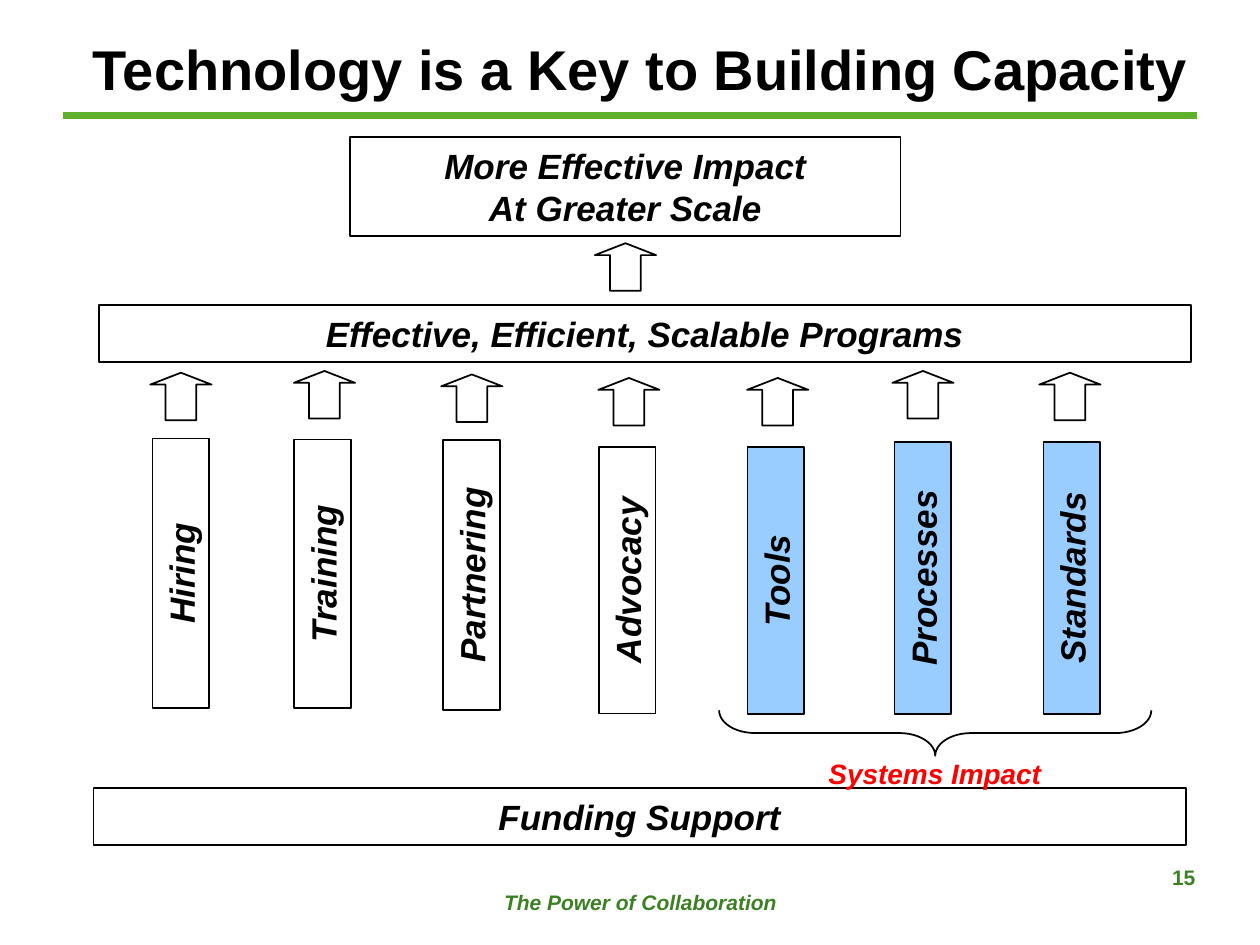
import pptx
import pptx.dml.color
import pptx.enum.shapes
import pptx.enum.text
import pptx.util
import pptx.oxml.ns
import lxml.etree

Pt = pptx.util.Pt
SHAPES = pptx.enum.shapes.MSO_SHAPE
ALIGN = pptx.enum.text.PP_ALIGN
ANCHOR = pptx.enum.text.MSO_ANCHOR
BLACK, GREEN, RED, BLUE = "000000", "3B8123", "FF0000", "99CCFF"


def color(hex_value):
    return pptx.dml.color.RGBColor.from_string(hex_value)


def add_outline(kind, left, top, width, height, fill=None, rotation=0):
    """Add a black-outlined preset shape, unfilled unless a fill is given."""
    shape = slide.shapes.add_shape(kind, Pt(left), Pt(top), Pt(width), Pt(height))
    shape.shadow.inherit = False
    shape.rotation = rotation
    shape.line.color.rgb = color(BLACK)
    shape.line.width = Pt(1)
    if fill:
        shape.fill.solid()
        shape.fill.fore_color.rgb = color(fill)
    else:
        shape.fill.background()
    return shape


def write(shape, lines, size=20, text_color=BLACK, italic=True,
          alignment=ALIGN.CENTER, anchor=ANCHOR.MIDDLE):
    frame = shape.text_frame
    frame.word_wrap = True
    frame.vertical_anchor = anchor
    for index, line in enumerate(lines):
        paragraph = frame.add_paragraph() if index else frame.paragraphs[0]
        paragraph.alignment = alignment
        run = paragraph.add_run()
        run.text = line
        run.font.name = "Arial"
        run.font.size = Pt(size)
        run.font.bold = True
        run.font.italic = italic
        run.font.color.rgb = color(text_color)


presentation = pptx.Presentation()
presentation.slide_width = Pt(720)
presentation.slide_height = Pt(540)
slide = presentation.slides.add_slide(presentation.slide_layouts[6])

# Title and rule
title = slide.shapes.add_textbox(Pt(30.2), Pt(18), Pt(671.8), Pt(41.8))
write(title, ["Technology is a Key to Building Capacity"], size=32, italic=False)
rule = slide.shapes.add_connector(
    pptx.enum.shapes.MSO_CONNECTOR.STRAIGHT, Pt(36), Pt(66), Pt(684), Pt(66))
rule.line.color.rgb = color("5FB12B")
rule.line.width = Pt(4.5)
lxml.etree.SubElement(rule._element.spPr, pptx.oxml.ns.qn("a:effectLst"))

# Horizontal boxes: lines, left, top, width, height
bars = [
    (["More Effective Impact", "At Greater Scale"], 200, 78.4, 314.6, 56.4),
    (["Effective, Efficient, Scalable Programs"], 56.4, 174.2, 624.2, 32.6),
    (["Funding Support"], 53.4, 450.4, 624.2, 32.6),
]
for lines, left, top, width, height in bars:
    write(add_outline(SHAPES.RECTANGLE, left, top, width, height), lines)

# Pillars: label, box center x, box center y, length, arrow center x, arrow top, fill
pillars = [
    ("Hiring", 103.4, 327.6, 154.2, 103.4, 213, None),
    ("Training", 184.4, 327.8, 153.4, 185.4, 212, None),
    ("Partnering", 269.4, 328.6, 154.2, 269.6, 214, None),
    ("Advocacy", 358.4, 331.5, 152.5, 359.4, 216, None),
    ("Tools", 443.4, 331.8, 152.5, 444.4, 216, BLUE),
    ("Processes", 527.4, 330.2, 155.4, 527.4, 212, BLUE),
    ("Standards", 612.4, 330.2, 155.4, 611.4, 213, BLUE),
]
thickness = 32.4
for label, center_x, center_y, length, arrow_x, arrow_top, fill in pillars:
    pillar = add_outline(SHAPES.RECTANGLE, center_x - length / 2,
                         center_y - thickness / 2, length, thickness, fill, 270)
    write(pillar, [label])

# Arrows below the upper two boxes
arrow_width, arrow_height = 35, 27.2
arrow_places = [(357.4, 139)] + [pillar[4:6] for pillar in pillars]
for center_x, top in arrow_places:
    arrow = add_outline(SHAPES.UP_ARROW, center_x - arrow_width / 2, top,
                        arrow_width, arrow_height)
    arrow.adjustments[0] = 0.5
    arrow.adjustments[1] = 0.25

# Brace under the systems pillars
brace = add_outline(SHAPES.RIGHT_BRACE, 521.4, 295.4, 26, 247, rotation=90)
brace.adjustments[0] = 0.79
brace.adjustments[1] = 0.5
brace_label = slide.shapes.add_textbox(Pt(462.2), Pt(428.4), Pt(144), Pt(26.6))
write(brace_label, ["Systems Impact"], size=16, text_color=RED)

# Footer
footer = slide.shapes.add_textbox(Pt(252), Pt(504.5), Pt(228), Pt(23))
write(footer, ["The Power of Collaboration"], size=12, text_color=GREEN,
      anchor=ANCHOR.TOP)
page_number = slide.shapes.add_textbox(Pt(462.2), Pt(490.4), Pt(228), Pt(37.4))
write(page_number, ["15"], size=12, text_color=GREEN, italic=False,
      alignment=ALIGN.RIGHT, anchor=ANCHOR.TOP)

presentation.save("out.pptx")
